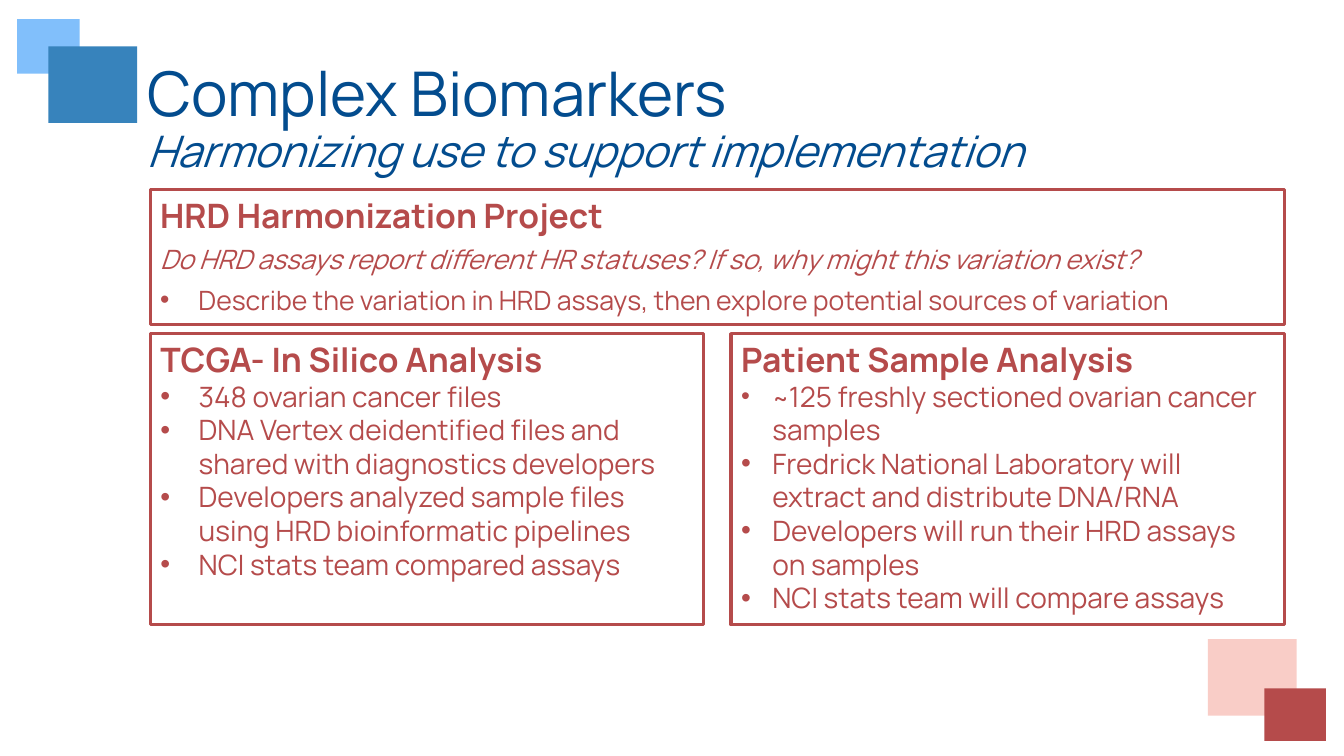
from lxml import etree
from pptx import Presentation
from pptx import util as u
from pptx.dml.color import RGBColor
from pptx.enum import shapes, text
from pptx.oxml import ns

FONT = "Manrope"
NAVY = RGBColor(0x03, 0x4C, 0x8E)
SKY = RGBColor(0x81, 0xBF, 0xFB)
BLUE = RGBColor(0x37, 0x83, 0xBC)
PINK = RGBColor(0xF9, 0xCD, 0xC7)
RED = RGBColor(0xB5, 0x4B, 0x4B)

# Grid: one full-width row above two columns
LEFT, WIDTH, GAP = 1.49, 11.25, 0.27
COL = (WIDTH - GAP) / 2
TOP_Y, TOP_H = 1.88, 1.34
LOW_Y, LOW_H = 3.31, 2.89


def write(p, words, size, color=RED, bold=False, italic=False):
    r = p.add_run()
    r.text = words
    f = r.font
    f.name, f.size, f.bold, f.italic = FONT, u.Pt(size), bold, italic
    f.color.rgb = color


def paragraph(tf, first=False, indent=0, after=0):
    p = tf.paragraphs[0] if first else tf.add_paragraph()
    pPr = p._p.get_or_add_pPr()
    pPr.set("marL", str(u.Inches(indent)))
    pPr.set("indent", str(-u.Inches(indent)))
    if indent:
        etree.SubElement(pPr, ns.qn("a:buFont")).set("typeface", "Arial")
        etree.SubElement(pPr, ns.qn("a:buChar")).set("char", "•")
    else:
        etree.SubElement(pPr, ns.qn("a:buNone"))
    p.alignment = text.PP_ALIGN.LEFT
    p.line_spacing = 1.0
    p.space_before, p.space_after = u.Pt(0), u.Pt(after)
    return p


prs = Presentation()
prs.slide_width, prs.slide_height = u.Inches(13.33), u.Inches(7.5)
s = prs.slides.add_slide(prs.slide_layouts[3])
title, left_list, right_list = s.placeholders

# Corner squares
for x, y, w, h, color in [
    (0.17, 0.19, 0.62, 0.54, SKY),
    (0.48, 0.46, 0.88, 0.76, BLUE),
    (11.98, 6.34, 0.88, 0.76, PINK),
    (12.54, 6.83, 0.61, 0.52, RED),
]:
    sp = s.shapes.add_shape(shapes.MSO_SHAPE.RECTANGLE, *map(u.Inches, (x, y, w, h)))
    sp.shadow.inherit = False
    sp.fill.solid()
    sp.fill.fore_color.rgb = color
    sp.line.fill.background()

# Title and subtitle
title.left, title.top, title.width, title.height = map(u.Inches, (1.36, 0.47, 11.38, 1.45))
tf = title.text_frame
tf.auto_size = text.MSO_AUTO_SIZE.NONE
tf.vertical_anchor = text.MSO_ANCHOR.MIDDLE
p = paragraph(tf, first=True)
p.line_spacing = 0.9
write(p, "Complex Biomarkers", 44, NAVY)
p.add_line_break()
write(p, "Harmonizing use to support implementation", 31, NAVY, italic=True)

# Outlined panels with their headings
project = s.shapes.add_shape(shapes.MSO_SHAPE.RECTANGLE, 0, 0, 0, 0)
project.shadow.inherit = False
for sp, x, y, w, h, heading, after in [
    (project, LEFT, TOP_Y, WIDTH, TOP_H, "HRD Harmonization Project", 6),
    (left_list, LEFT, LOW_Y, COL, LOW_H, "TCGA- In Silico Analysis", 0),
    (right_list, LEFT + COL + GAP, LOW_Y, COL, LOW_H, "Patient Sample Analysis", 0),
]:
    sp.left, sp.top, sp.width, sp.height = map(u.Inches, (x, y, w, h))
    sp.fill.background()
    sp.line.color.rgb = RED
    sp.line.width = u.Pt(2.25)
    tf = sp.text_frame
    tf.word_wrap = True
    tf.auto_size = text.MSO_AUTO_SIZE.NONE
    tf.vertical_anchor = text.MSO_ANCHOR.TOP
    write(paragraph(tf, first=True, after=after), heading, 24, bold=True)

# Project question and aim
tf = project.text_frame
write(paragraph(tf, after=6),
      "Do HRD assays report different HR statuses? If so, why might this variation exist?",
      19, italic=True)
write(paragraph(tf, indent=0.38, after=6),
      "Describe the variation in HRD assays, then explore potential sources of variation", 19)

# In silico list
for item in [
    "348 ovarian cancer files",
    "DNA Vertex deidentified files and shared with diagnostics developers",
    "Developers analyzed sample files using HRD bioinformatic pipelines",
    "NCI stats team compared assays",
]:
    write(paragraph(left_list.text_frame, indent=0.38), item, 20)

# Patient sample list, opening with a smaller tilde
tf = right_list.text_frame
p = paragraph(tf, indent=0.31)
write(p, "~", 18)
write(p, "125 freshly sectioned ovarian cancer samples", 20)
for item in [
    "Fredrick National Laboratory will extract and distribute DNA/RNA",
    "Developers will run their HRD assays on samples",
    "NCI stats team will compare assays",
]:
    write(paragraph(tf, indent=0.31), item, 20)

prs.save("out.pptx")
